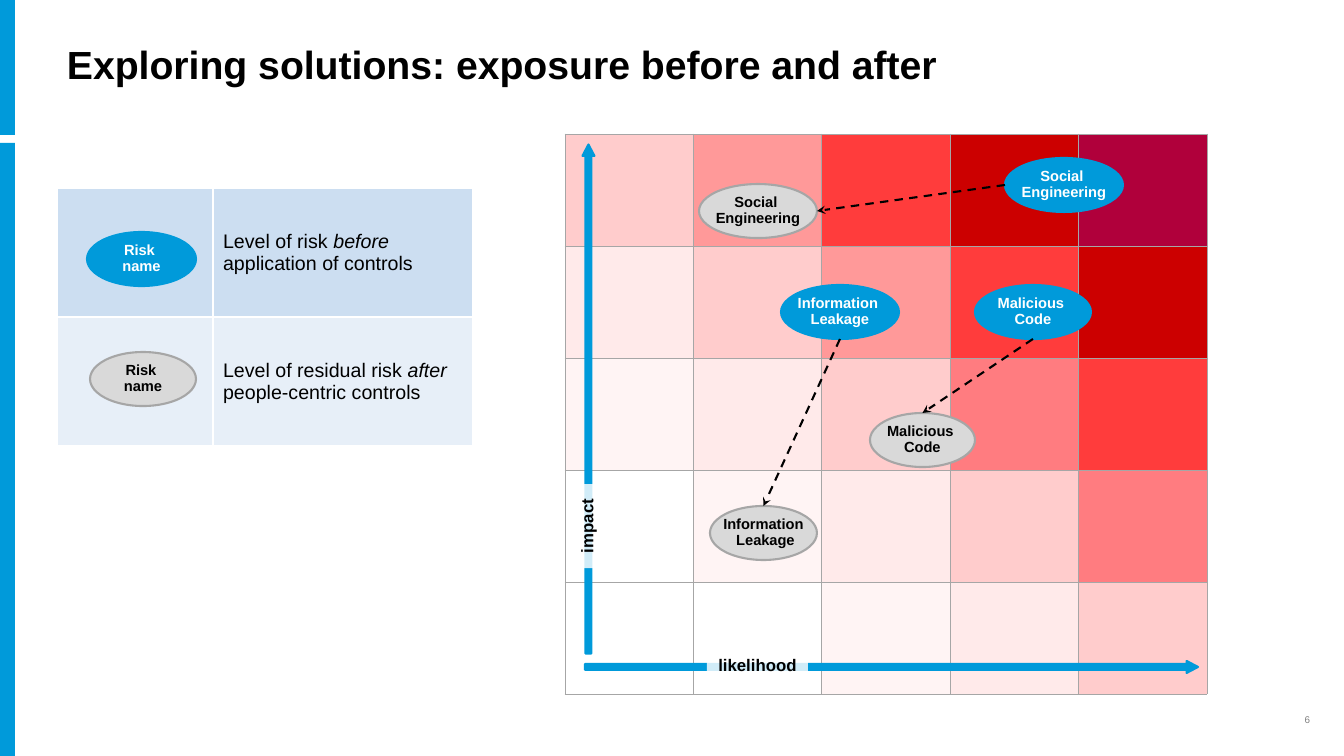
from pptx import Presentation
from pptx import util as u
from pptx.dml.color import RGBColor
from pptx.enum import dml, shapes, text
from pptx.oxml import parse_xml
from pptx.oxml.ns import nsdecls, qn

TITLE = "Exploring solutions: exposure before and after"
PAGE_NUMBER = "6"

LEGEND = [
    ("CCDEF1", ("Level of risk ", "before", " application of controls")),
    ("E7EFF8", ("Level of residual risk ", "after", " people-centric controls")),
]
LEGEND_OVALS = [
    ("Risk \vname", (87, 232, 109), "before"),
    ("Risk \vname", (90, 352, 106), "after"),
]
HEAT = [
    ["FFCCCC", "FF9999", "FF3C3C", "CC0000", "B0003B"],
    ["FFEAEA", "FFCCCC", "FF9999", "FF3C3C", "CC0000"],
    ["FFF4F4", "FFEAEA", "FFCCCC", "FF7C80", "FF3C3C"],
    ["FFFFFF", "FFF4F4", "FFEAEA", "FFCCCC", "FF7C80"],
    ["FFFFFF", "FFFFFF", "FFF4F4", "FFEAEA", "FFCCCC"],
]
AXES = [
    ("likelihood", (585, 661, 613, 12), (707, 656, 101, 20), 0),
    ("impact", (334, 393, 509, 12), (546, 516, 84, 20), 270),
]
RISKS = [
    ("Social \vEngineering", (1005, 158, 118),
     "Social \vEngineering", (699, 184, 118), ("left", "right")),
    ("Malicious \vCode", (975, 285, 116),
     "Malicious \vCode", (870, 413, 105), ("bottom", "top")),
    ("Information \vLeakage", (781, 285, 118),
     "Information\v Leakage", (710, 506, 107), ("bottom", "top")),
]
SIDE_BARS = [(0, 143, 15, 613), (0, 0, 15, 135)]
OVAL_HEIGHT = 54

THEME = {
    "font": "Arial",
    "blue": "009ADA", "black": "000000", "white": "FFFFFF", "muted": "808080",
    "grid": "A6A6A6",
    "title": 28, "legend": 14, "axis": 12, "oval": 10.5, "page": 7,
    "before": ("009ADA", "009ADA", "FFFFFF"),
    "after": ("D9D9D9", "A6A6A6", "000000"),
}


def px(length):
    return u.Emu(round(length * 914400 / 100.8))


def box(*lengths):
    return [px(length) for length in lengths]


def rgb(name):
    return RGBColor.from_string(THEME.get(name, name))


def style_font(font, size, color, bold=False):
    font.name = THEME["font"]
    font.size = u.Pt(THEME[size])
    font.bold = bold
    font.color.rgb = rgb(color)


def write(shape, words, size, color, align, bold=True, spacing=0.9, wrap=True):
    frame = shape.text_frame
    frame.word_wrap = wrap
    frame.vertical_anchor = text.MSO_ANCHOR.MIDDLE
    frame.margin_left = frame.margin_right = frame.margin_top = frame.margin_bottom = 0
    frame.text = words
    paragraph = frame.paragraphs[0]
    paragraph.alignment = align
    paragraph.line_spacing = spacing
    style_font(paragraph.font, size, color, bold)


def add_filled(slide, kind, place, fill, line=None):
    shape = slide.shapes.add_shape(kind, *box(*place))
    shape.shadow.inherit = False
    shape.fill.solid()
    shape.fill.fore_color.rgb = rgb(fill)
    if line:
        shape.line.color.rgb = rgb(line)
        shape.line.width = u.Pt(1.5)
    else:
        shape.line.fill.background()
    return shape


def add_label(slide, place, words, size, color, align, bold):
    write(slide.shapes.add_textbox(*box(*place)), words, size, color, align, bold)


def add_grid(slide, left, top, widths, height, fills, border, points):
    frame = slide.shapes.add_table(len(fills), len(widths),
                                   *box(left, top, sum(widths), height * len(fills)))
    table = frame.table
    table.first_row = table.horz_banding = False
    for column, width in zip(table.columns, widths):
        column.width = px(width)
    for row, colors in zip(table.rows, fills):
        row.height = px(height)
        for cell, color in zip(row.cells, colors):
            properties = cell._tc.get_or_add_tcPr()
            for side in "LRTB":
                properties.append(parse_xml(
                    f'<a:ln{side} {nsdecls("a")} w="{u.Pt(points)}"><a:solidFill>'
                    f'<a:srgbClr val="{THEME[border]}"/></a:solidFill></a:ln{side}>'))
            cell.fill.solid()
            cell.fill.fore_color.rgb = rgb(color)
    return table


def add_legend(slide):
    fills = [[color, color] for color, _ in LEGEND]
    table = add_grid(slide, 57, 188, [156, 260], 129, fills, "white", 1)
    for row, (_, parts) in enumerate(LEGEND):
        cell = table.cell(row, 1)
        cell.vertical_anchor = text.MSO_ANCHOR.MIDDLE
        paragraph = cell.text_frame.paragraphs[0]
        for index, part in enumerate(parts):
            run = paragraph.add_run()
            run.text = part
            run.font.italic = index == 1
            style_font(run.font, "legend", "black")


def add_axis(slide, name, arrow_place, label_place, rotation):
    arrow = add_filled(slide, shapes.MSO_SHAPE.RIGHT_ARROW, arrow_place, "blue", "blue")
    arrow.adjustments[0], arrow.adjustments[1] = 0.5, 0.95
    label = add_filled(slide, shapes.MSO_SHAPE.RECTANGLE, label_place, "white")
    color = label._element.spPr.find(qn("a:solidFill"))[0]
    color.append(parse_xml(f'<a:alpha {nsdecls("a")} val="82000"/>'))
    write(label, name, "axis", "black", text.PP_ALIGN.CENTER)
    arrow.rotation = label.rotation = rotation


def add_oval(slide, name, place, state):
    fill, line, color = THEME[state]
    left, top, width = place
    oval = add_filled(slide, shapes.MSO_SHAPE.OVAL, (left, top, width, OVAL_HEIGHT), fill, line)
    write(oval, name, "oval", color, text.PP_ALIGN.CENTER, wrap=False)
    return oval


def side_point(shape, side):
    across, down = {"left": (0, 0.5), "right": (1, 0.5),
                    "top": (0.5, 0), "bottom": (0.5, 1)}[side]
    return round(shape.left + shape.width * across), round(shape.top + shape.height * down)


def add_move(slide, before, after, sides):
    connector = slide.shapes.add_connector(
        shapes.MSO_CONNECTOR.STRAIGHT,
        *side_point(before, sides[0]), *side_point(after, sides[1]))
    connector.line.color.rgb = rgb("black")
    connector.line.width = u.Pt(1.5)
    connector.line.dash_style = dml.MSO_LINE.DASH
    properties = connector._element.spPr
    properties.find(qn("a:ln")).append(
        parse_xml(f'<a:tailEnd {nsdecls("a")} type="stealth"/>'))
    properties.append(parse_xml(f'<a:effectLst {nsdecls("a")}/>'))


def main():
    presentation = Presentation()
    presentation.slide_width, presentation.slide_height = px(1344), px(756)
    slide = presentation.slides.add_slide(presentation.slide_layouts[6])

    for bar in SIDE_BARS:
        add_filled(slide, shapes.MSO_SHAPE.RECTANGLE, bar, "blue")
    add_legend(slide)
    add_label(slide, (67, 0, 1210, 134), TITLE, "title", "black", text.PP_ALIGN.LEFT, True)
    add_label(slide, (1277, 708, 33, 24), PAGE_NUMBER, "page", "muted",
              text.PP_ALIGN.RIGHT, False)
    add_grid(slide, 565, 134, [642 / 5] * 5, 112, HEAT, "grid", 0.5)
    for axis in AXES:
        add_axis(slide, *axis)
    for oval in LEGEND_OVALS:
        add_oval(slide, *oval)
    for before_name, before_place, after_name, after_place, sides in RISKS:
        before = add_oval(slide, before_name, before_place, "before")
        after = add_oval(slide, after_name, after_place, "after")
        add_move(slide, before, after, sides)

    presentation.save("out.pptx")


if __name__ == "__main__":
    main()
